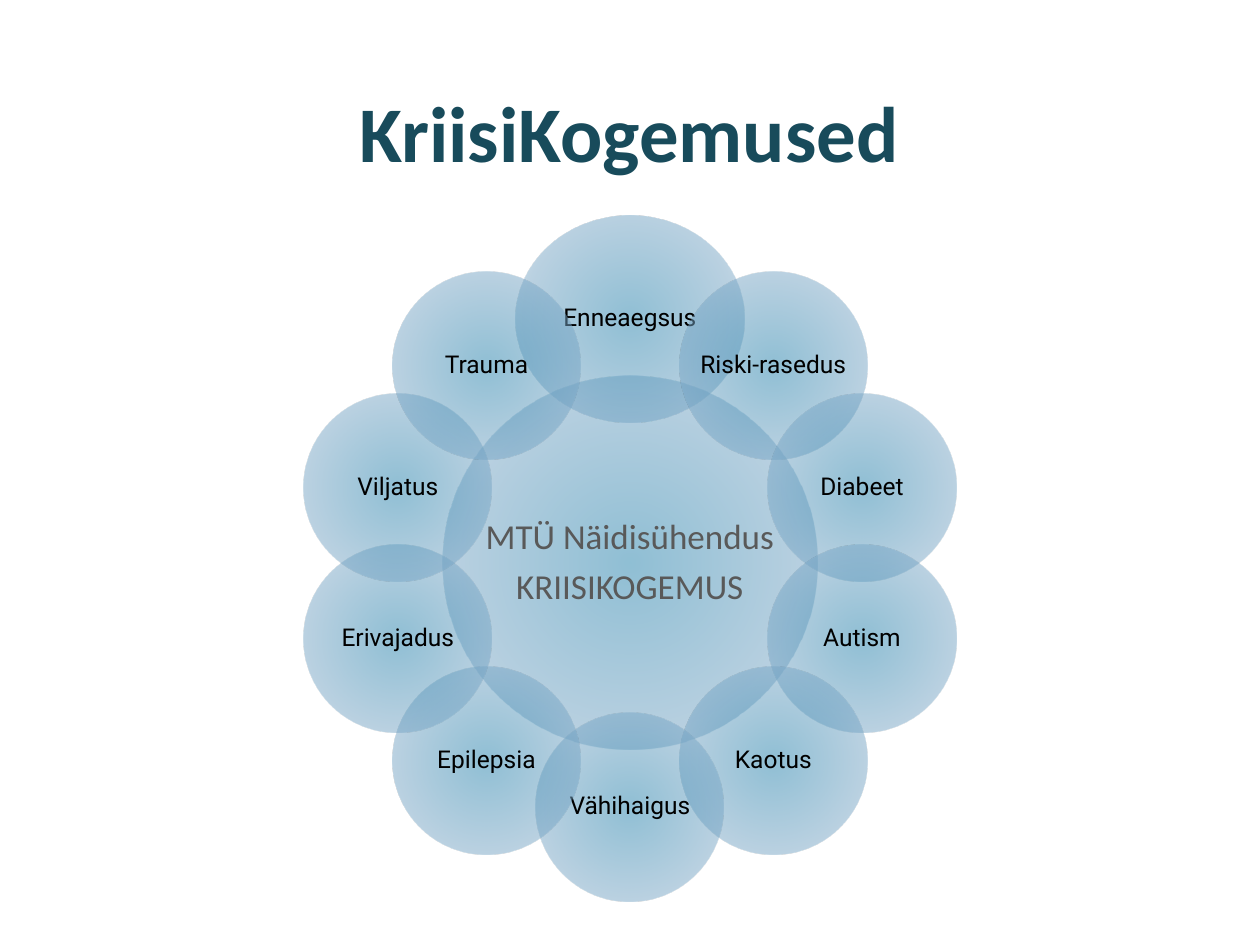
from math import cos, radians, sin

from pptx import Presentation
from pptx.dml.color import RGBColor
from pptx.enum.shapes import MSO_SHAPE
from pptx.enum.text import MSO_ANCHOR, PP_ALIGN
from pptx.oxml import parse_xml
from pptx.oxml.ns import nsdecls, qn
from pptx.util import Emu, Pt

EMU_PER_PX = 914400 / 126
CENTER_X, CENTER_Y = 630, 563
RING_RADIUS = 244
CORE_SIZE = 374
PETAL_SIZE = 188
TOP_PETAL_SIZE = (228, 206)
GRADIENT_STOPS = [(0, "2080AB"), (69, "75A5C5"), (100, "B8CCDC")]
CORE_LINES = ["MTÜ Näidisühendus", "KRIISIKOGEMUS"]
EXPERIENCES = [
    "Enneaegsus", "Riski-rasedus", "Diabeet", "Autism", "Kaotus",
    "Vähihaigus", "Epilepsia", "Erivajadus", "Viljatus", "Trauma",
]


def px(value):
    return Emu(round(value * EMU_PER_PX))


def color(hex_string):
    return RGBColor.from_string(hex_string)


def format_paragraph(paragraph, font_name, size, hex_string, bold=False):
    paragraph.alignment = PP_ALIGN.CENTER
    for run in paragraph.runs:
        run.font.name = font_name
        run.font.size = Pt(size)
        run.font.bold = bold
        run.font.color.rgb = color(hex_string)


def set_radial_fill(shape):
    """Fill with a half-transparent gradient that runs out from the centre."""
    stops = "".join(
        f'<a:gs pos="{position * 1000}"><a:srgbClr val="{hex_string}">'
        f'<a:alpha val="50000"/></a:srgbClr></a:gs>'
        for position, hex_string in GRADIENT_STOPS
    )
    gradient = parse_xml(
        f'<a:gradFill {nsdecls("a")} rotWithShape="1"><a:gsLst>{stops}</a:gsLst>'
        '<a:path path="circle"><a:fillToRect l="100000" t="100000" r="100000" b="100000"/>'
        '</a:path></a:gradFill>'
    )
    shape.element.spPr.find(qn("a:prstGeom")).addnext(gradient)


def add_title(slide, text):
    title = slide.shapes.title
    title.left, title.top, title.width, title.height = px(75), px(0), px(1108), px(185)
    text_frame = title.text_frame
    text_frame.text = text
    text_frame.vertical_anchor = MSO_ANCHOR.BOTTOM
    format_paragraph(text_frame.paragraphs[0], "Calibri", 45, "184B5B", bold=True)


def add_circle(group, center, size, lines, font_name, font_size, hex_string):
    (center_x, center_y), (width, height) = center, size
    circle = group.shapes.add_shape(
        MSO_SHAPE.OVAL, px(center_x - width / 2), px(center_y - height / 2),
        px(width), px(height),
    )
    circle.shadow.inherit = False
    circle.line.fill.background()
    set_radial_fill(circle)

    text_frame = circle.text_frame
    text_frame.text = "\n".join(lines)
    text_frame.word_wrap = False
    text_frame.vertical_anchor = MSO_ANCHOR.MIDDLE
    text_frame.margin_left = text_frame.margin_right = px(3)
    text_frame.margin_top = text_frame.margin_bottom = px(3)
    for paragraph in text_frame.paragraphs:
        format_paragraph(paragraph, font_name, font_size, hex_string)
        paragraph.line_spacing = 0.9
        paragraph.space_after = Pt(round(font_size * 0.35))


def add_flower(slide):
    group = slide.shapes.add_group_shape()
    add_circle(group, (CENTER_X, CENTER_Y), (CORE_SIZE, CORE_SIZE),
               CORE_LINES, "Calibri", 20, "595959")
    for index, experience in enumerate(EXPERIENCES):
        angle = radians(index * 360 / len(EXPERIENCES))
        center = (CENTER_X + RING_RADIUS * sin(angle),
                  CENTER_Y - RING_RADIUS * cos(angle))
        size = TOP_PETAL_SIZE if index == 0 else (PETAL_SIZE, PETAL_SIZE)
        add_circle(group, center, size, [experience], "Roboto", 14, "000000")


def main():
    presentation = Presentation()
    presentation.slide_width, presentation.slide_height = px(1260), px(945)
    slide = presentation.slides.add_slide(presentation.slide_layouts[5])
    add_title(slide, "KriisiKogemused")
    add_flower(slide)
    presentation.save("out.pptx")


if __name__ == "__main__":
    main()
